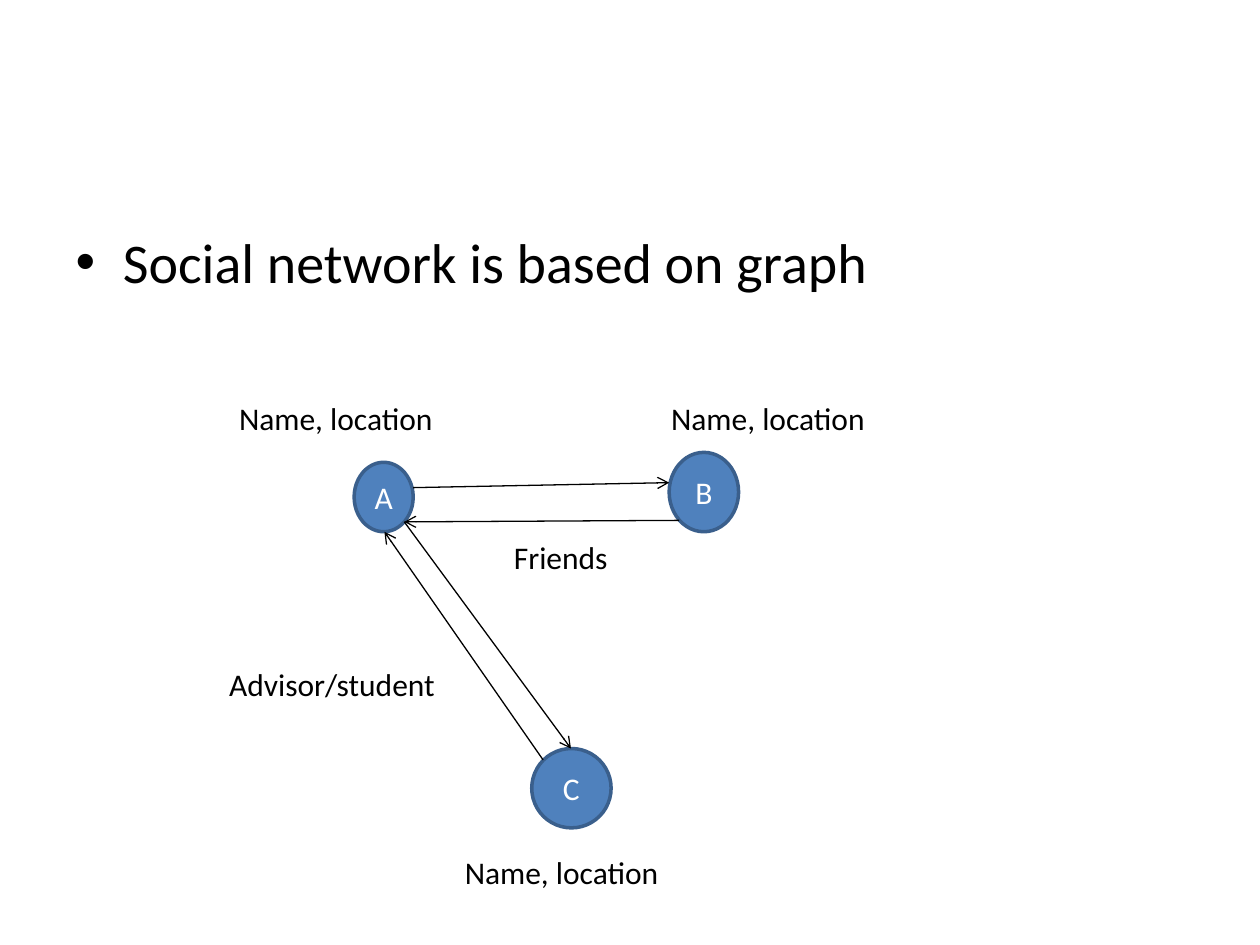
from pptx import Presentation
from pptx import util as u
from pptx.dml import color
from pptx.enum import shapes, text
from pptx.oxml import ns, xmlchemy

FONT = "Calibri"


def rgb(hex_string):
    return color.RGBColor.from_string(hex_string)


def style_text(shape, size, hex_string):
    for paragraph in shape.text_frame.paragraphs:
        for run in paragraph.runs:
            run.font.name = FONT
            run.font.size = u.Pt(size)
            run.font.color.rgb = rgb(hex_string)


presentation = Presentation()
presentation.slide_width = u.Cm(25.4)
presentation.slide_height = u.Cm(19.05)

# The slide shows no title, only a bulleted body
slide = presentation.slides.add_slide(presentation.slide_layouts[1])
title = slide.shapes.title
title.element.getparent().remove(title.element)

body = slide.placeholders[1]
body.left, body.top = u.Cm(1.27), u.Cm(4.45)
body.width, body.height = u.Cm(22.86), u.Cm(12.57)
body.text_frame.text = "Social network is based on graph"
style_text(body, 32, "000000")

# People: name, left, top, width, height
people = [
    ("A", 7.14, 9.32, 1.19, 1.4),
    ("B", 13.49, 9.12, 1.4, 1.6),
    ("C", 10.72, 15.09, 1.6, 1.6),
]
for name, *box in people:
    node = slide.shapes.add_shape(shapes.MSO_SHAPE.OVAL, *map(u.Cm, box))
    node.shadow.inherit = False
    node.fill.solid()
    node.fill.fore_color.rgb = rgb("4F81BD")
    node.line.color.rgb = rgb("3A5F8C")
    node.line.width = u.Pt(2)
    node.text_frame.text = name
    node.text_frame.word_wrap = False
    node.text_frame.vertical_anchor = text.MSO_ANCHOR.MIDDLE
    node.text_frame.paragraphs[0].alignment = text.PP_ALIGN.CENTER
    style_text(node, 18, "FFFFFF")

# Relations: arrows from start to end
relations = [
    (8.33, 9.83, 13.49, 9.73),     # A to B
    (13.69, 10.49, 8.15, 10.52),   # B to A
    (8.15, 10.52, 11.51, 15.09),   # A to C
    (10.95, 15.32, 7.75, 10.72),   # C to A
]
for ends in relations:
    arrow = slide.shapes.add_connector(
        shapes.MSO_CONNECTOR.STRAIGHT, *map(u.Cm, ends))
    arrow.line.color.rgb = rgb("000000")
    arrow.line.width = u.Pt(0.75)
    head = xmlchemy.OxmlElement("a:tailEnd")
    head.set("type", "arrow")
    properties = arrow.element.find(ns.qn("p:spPr"))
    properties.find(ns.qn("a:ln")).append(head)
    properties.append(xmlchemy.OxmlElement("a:effectLst"))

# Labels: wording, left, top, width
labels = [
    ("Name, location", 4.57, 7.92, 5.16),
    ("Name, location", 9.12, 17.07, 5.16),
    ("Name, location", 13.28, 7.92, 5.16),
    ("Friends", 10.11, 10.72, 2.77),
    ("Advisor/student", 4.37, 13.28, 5.08),
]
for wording, left, top, width in labels:
    label = slide.shapes.add_textbox(
        u.Cm(left), u.Cm(top), u.Cm(width), u.Cm(1.02))
    label.text_frame.text = wording
    label.text_frame.word_wrap = True
    label.text_frame.auto_size = text.MSO_AUTO_SIZE.SHAPE_TO_FIT_TEXT
    style_text(label, 18, "000000")

presentation.save("out.pptx")
